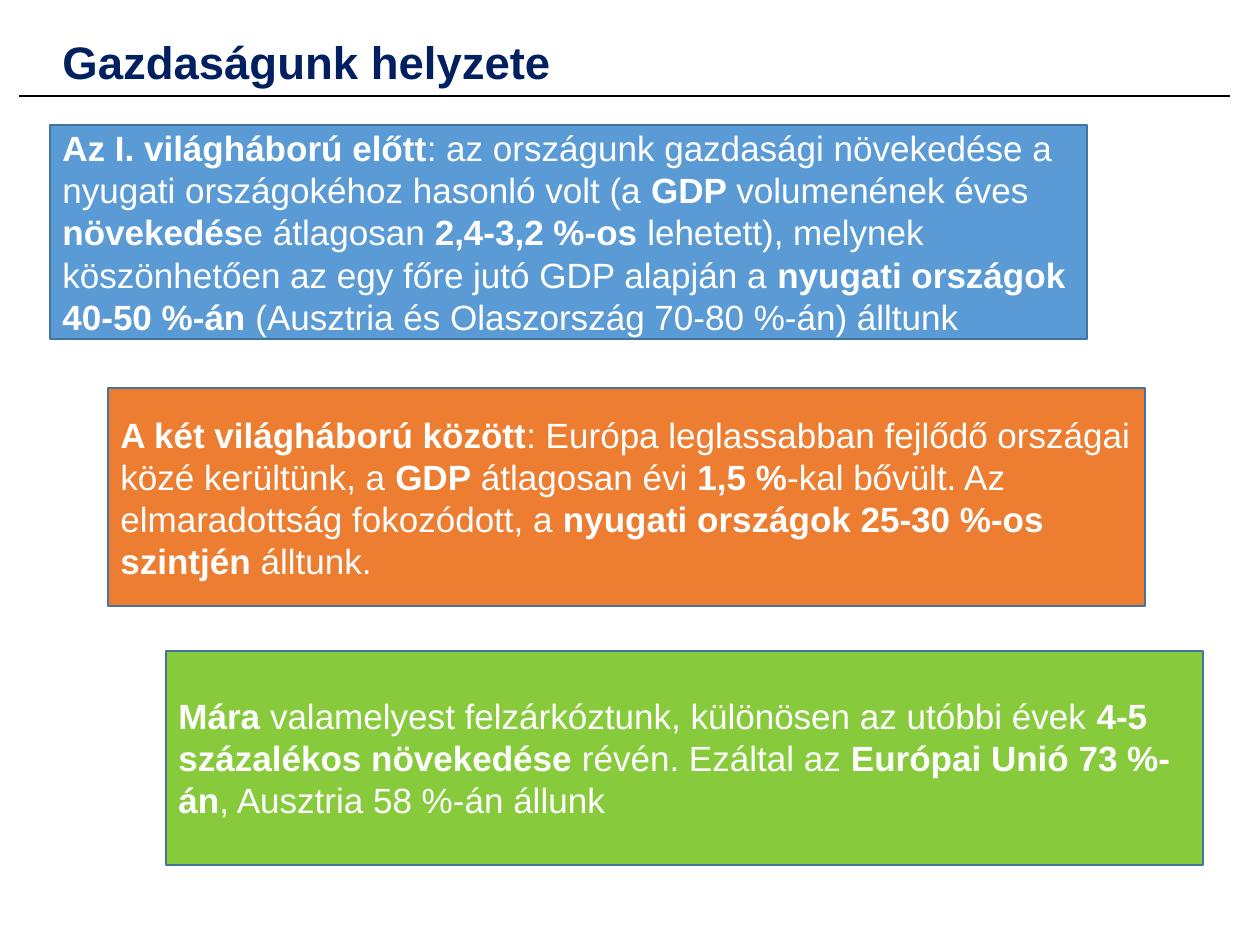
from pptx import Presentation
from pptx.dml.color import RGBColor
from pptx.enum.shapes import MSO_CONNECTOR, MSO_SHAPE
from pptx.enum.text import MSO_ANCHOR, PP_ALIGN
from pptx.oxml.ns import qn
from pptx.util import Inches, Pt
from lxml.etree import SubElement

PX = Inches(1) / 126
FONT = "Arial"

# Each period: fill, height, and text pieces that alternate bold and regular
PERIODS = [
    ("5B9BD5", 214, [
        "Az I. világháború előtt",
        ": az országunk gazdasági növekedése a nyugati országokéhoz hasonló volt (a ",
        "GDP ", "volumenének éves ", "növekedés", "e átlagosan ", "2,4-3,2 %-os ",
        "lehetett), melynek köszönhetően az egy főre jutó GDP alapján a ",
        "nyugati országok 40-50 %-án",
        " (Ausztria és Olaszország 70-80 %-án) álltunk"]),
    ("ED7D31", 218, [
        "A két világháború között",
        ": Európa leglassabban fejlődő országai közé kerültünk, a ",
        "GDP", " átlagosan évi ", "1,5 %",
        "-kal bővült. Az elmaradottság fokozódott, a ",
        "nyugati országok 25-30 %-os szintjén ", "álltunk."]),
    ("87CB3D", 214, [
        "Mára ", "valamelyest felzárkóztunk, különösen az utóbbi évek ",
        "4-5 százalékos növekedése ", "révén. Ezáltal az ",
        "Európai Unió 73 %-án", ", Ausztria 58 %-án állunk"]),
]


def px(*lengths):
    return [round(length * PX) for length in lengths]


def rgb(code):
    return RGBColor.from_string(code)


def set_font(paragraph, size, color):
    paragraph.font.name = FONT
    paragraph.font.size = Pt(size)
    paragraph.font.color.rgb = rgb(color)


def add_header(slide, left, top, width, height):
    # Title
    title = slide.shapes.add_textbox(*px(left + 31, top, width - 57, height))
    title.text_frame.word_wrap = True
    heading = title.text_frame.paragraphs[0]
    heading.text = "Gazdaságunk helyzete"
    set_font(heading, 26, "002060")
    heading.font.bold = True

    # Rule under the title
    bottom = top + height
    rule = slide.shapes.add_connector(
        MSO_CONNECTOR.STRAIGHT, *px(left, bottom, left + width, bottom))
    rule.line.color.rgb = rgb("000000")
    rule.line.width = Pt(1.5)
    SubElement(rule._element.spPr, qn("a:effectLst"))


def add_period(slide, left, top, width, height, fill, pieces):
    period = slide.shapes.add_shape(
        MSO_SHAPE.RECTANGLE, *px(left, top, width, height))
    period.shadow.inherit = False
    period.fill.solid()
    period.fill.fore_color.rgb = rgb(fill)
    period.line.color.rgb = rgb("43739E")
    period.line.width = Pt(1)

    frame = period.text_frame
    frame.word_wrap = True
    frame.vertical_anchor = MSO_ANCHOR.MIDDLE
    statement = frame.paragraphs[0]
    statement.alignment = PP_ALIGN.LEFT
    set_font(statement, 20, "FFFFFF")
    for index, piece in enumerate(pieces):
        run = statement.add_run()
        run.text = piece
        run.font.bold = index % 2 == 0


def add_periods(slide, left, top, width, step_x, step_y):
    # Staircase of periods, each one further right and down
    for step, (fill, height, pieces) in enumerate(PERIODS):
        add_period(slide, left + step * step_x, top + step * step_y,
                   width, height, fill, pieces)


def main():
    prs = Presentation()
    prs.slide_width, prs.slide_height = px(1260, 945)
    slide = prs.slides.add_slide(prs.slide_layouts[6])
    add_periods(slide, left=50, top=125, width=1037, step_x=58, step_y=263)
    add_header(slide, left=19, top=28, width=1211, height=68)
    prs.save("out.pptx")


if __name__ == "__main__":
    main()
